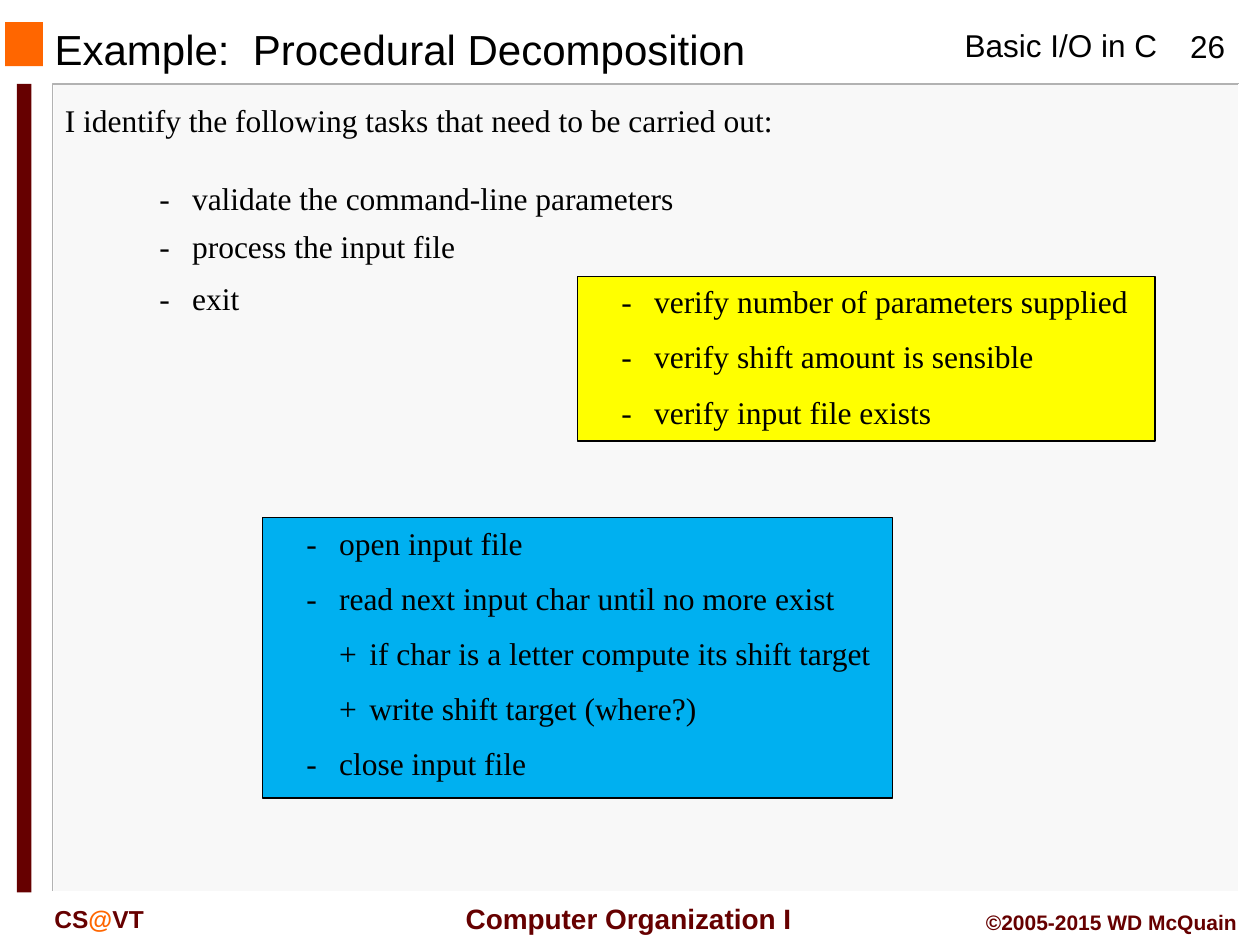
import lxml.etree
import pptx
import pptx.dml.color
import pptx.enum.shapes
import pptx.enum.text
import pptx.oxml.ns
import pptx.util

C = {"black": "000000", "white": "FFFFFF", "panel": "F8F8F8", "edge": "B2B2B2",
     "orange": "FF6600", "maroon": "660000", "blue": "00B0F0", "yellow": "FFFF00"}
ALIGN = pptx.enum.text.PP_ALIGN
RECT = pptx.enum.shapes.MSO_SHAPE.RECTANGLE
SERIF = {"name": "Times New Roman", "size": pptx.util.Pt(18)}
TABS = (0.25, 0.51, 0.75)

prs = pptx.Presentation()
prs.slide_width, prs.slide_height = pptx.util.Inches(10), pptx.util.Inches(7.5)
U = prs.slide_width / 120
s = prs.slides.add_slide(prs.slide_layouts[5])


def rgb(name):
    return pptx.dml.color.RGBColor.from_string(C[name])


def write(sp, lines, font, align=ALIGN.LEFT, wrap=True, anchor="TOP"):
    tf = sp.text_frame
    frame = {"word_wrap": wrap, "auto_size": pptx.enum.text.MSO_AUTO_SIZE.NONE,
             "vertical_anchor": pptx.enum.text.MSO_ANCHOR[anchor]}
    for key, value in frame.items():
        setattr(tf, key, value)
    for i, runs in enumerate(lines):
        p = tf.add_paragraph() if i else tf.paragraphs[0]
        p.alignment = align
        p.space_before = pptx.util.Pt(9.9 if i else 0)
        if runs[0][0].startswith("\t"):
            tabs = lxml.etree.SubElement(p._p.get_or_add_pPr(), pptx.oxml.ns.qn("a:tabLst"))
            for stop in TABS:
                lxml.etree.SubElement(tabs, pptx.oxml.ns.qn("a:tab"),
                                      pos=str(pptx.util.Inches(stop)), algn="l")
        for text, color in runs:
            r = p.add_run()
            r.text = text
            for key, value in font.items():
                setattr(r.font, key, value)
            r.font.color.rgb = rgb(color)


for box, color in [((5.1, 8, 112.8, 77), "panel"),
                   ((0.5, 2.1, 3.6, 4.2), "orange"),
                   ((1.6, 8, 1.4, 77), "maroon")]:
    sp = s.shapes.add_shape(RECT, *[round(v * U) for v in box])
    sp.shadow.inherit = False
    sp.fill.solid()
    sp.fill.fore_color.rgb = rgb(color)
    sp.line.fill.background()

for points, color in [([(117.8, 8), (5, 8), (5, 85)], "edge"),
                      ([(118, 8), (118, 85), (5.2, 85)], "white")]:
    fb = s.shapes.build_freeform(*points[0], scale=U)
    fb.add_line_segments(points[1:], close=False)
    sp = fb.convert_to_shape()
    sp.shadow.inherit = False
    sp.fill.background()
    sp.line.color.rgb = rgb(color)
    sp.line.width = pptx.util.Pt(1)

sp = s.shapes.title
for key, value in zip(("left", "top", "width", "height"), (4, 2.3, 76, 4.6)):
    setattr(sp, key, round(value * U))
write(sp, [[("Example:  Procedural Decomposition", "black")]],
      {"name": "Arial", "size": pptx.util.Pt(24)}, anchor="MIDDLE")

for box, runs, size, bold, align, wrap, anchor in [
    ((90.7, 1.9, 21, 4.8), [("Basic I/O in C", "black")], 18, False, ALIGN.LEFT, False, "TOP"),
    ((111, 2, 8, 4.8), [("26", "black")], 18, False, ALIGN.CENTER, True, "TOP"),
    ((4, 85.5, 18, 4), [("CS", "maroon"), ("@", "orange"), ("VT", "maroon")],
     14, True, ALIGN.LEFT, True, "TOP"),
    ((42, 85.3, 35, 4.4), [(" Computer Organization I", "maroon")],
     16, True, ALIGN.CENTER, False, "MIDDLE"),
    ((88, 86, 31, 3.6), [("©2005-2015 WD McQuain", "maroon")],
     12, True, ALIGN.RIGHT, True, "TOP"),
]:
    sp = s.shapes.add_textbox(*[round(v * U) for v in box])
    write(sp, [runs], {"name": "Arial", "size": pptx.util.Pt(size), "bold": bold},
          align, wrap, anchor)

for left, top, text in [
    (5, 9, "I identify the following tasks that need to be carried out:"),
    (11, 16.5, "\t-\tvalidate the command-line parameters"),
    (11, 21, "\t-\tprocess the input file"),
    (11, 26, "\t-\texit"),
]:
    sp = s.shapes.add_textbox(*[round(v * U) for v in (left, top, 118 - left, 4.8)])
    write(sp, [[(text, "black")]], SERIF)

for box, color, lines in [
    ((25, 49.3, 60, 26.7), "blue",
     ["\t-\topen input file",
      "\t-\tread next input char until no more exist",
      "\t\t+\tif char is a letter compute its shift target",
      "\t\t+\twrite shift target (where?)",
      "\t-\tclose input file"]),
    ((55, 26.3, 55, 15.7), "yellow",
     ["\t-\tverify number of parameters supplied",
      "\t-\tverify shift amount is sensible",
      "\t-\tverify input file exists"]),
]:
    sp = s.shapes.add_shape(RECT, *[round(v * U) for v in box])
    sp.shadow.inherit = False
    sp.fill.solid()
    sp.fill.fore_color.rgb = rgb(color)
    sp.line.color.rgb = rgb("black")
    sp.line.width = pptx.util.Pt(0.75)
    write(sp, [[(text, "black")] for text in lines], SERIF)

prs.save("out.pptx")
